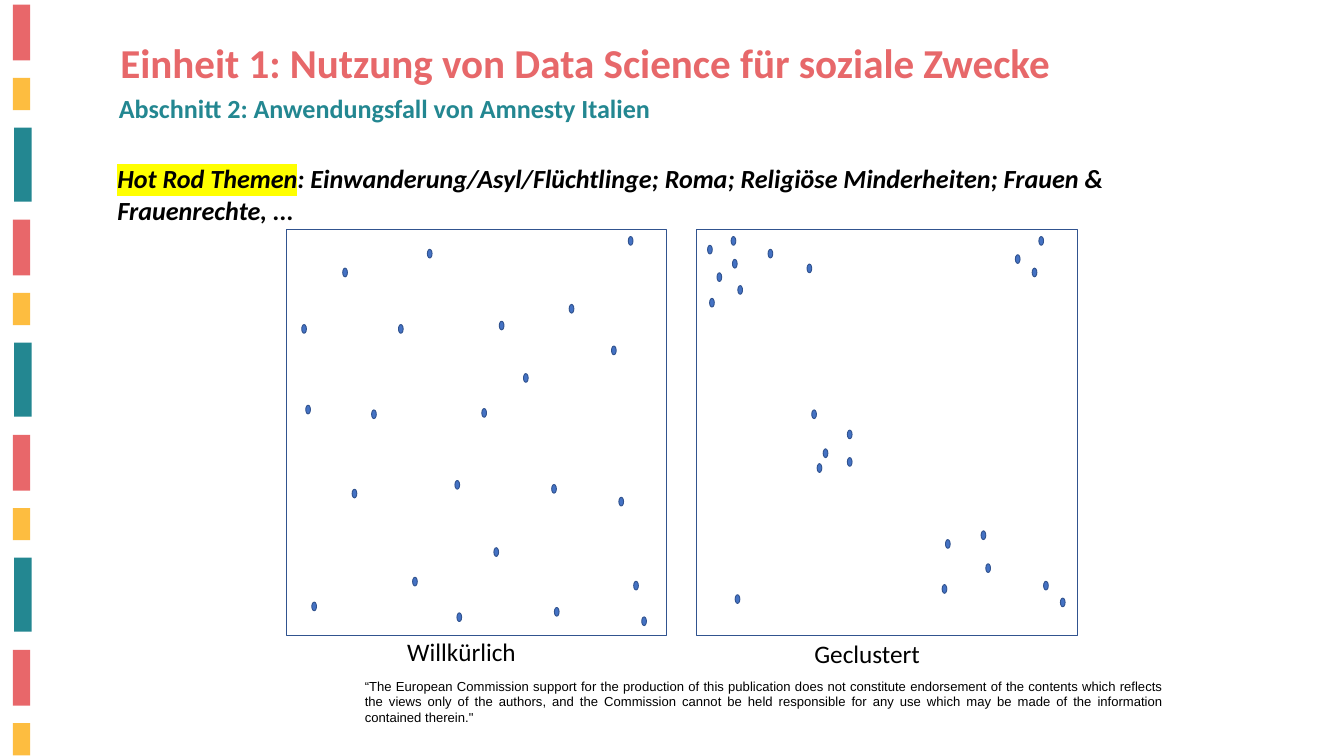
from lxml import etree
from pptx import Presentation
from pptx import util as u
from pptx.dml.color import RGBColor
from pptx.enum import shapes, text
from pptx.oxml.ns import qn

deck = Presentation()
deck.slide_width, deck.slide_height = u.Inches(20), u.Inches(11.25)
col, row = deck.slide_width / 20, deck.slide_height / 11.25
slide = deck.slides.add_slide(deck.slide_layouts[5])
kinds = shapes.MSO_SHAPE


def draw(kind, x, y, w, h, fill=None, line=None):
    shape = slide.shapes.add_shape(
        kind, int(x * col), int(y * row), int(w * col), int(h * row))
    shape.shadow.inherit = False
    if fill:
        shape.fill.solid()
        shape.fill.fore_color.rgb = RGBColor.from_string(fill)
    else:
        shape.fill.background()
    if line:
        shape.line.color.rgb = RGBColor.from_string(line)
        shape.line.width = u.Pt(1)
    else:
        shape.line.fill.background()


def write(box, at, parts, size, color="000000", face="Calibri",
          bold=False, slant=False, align=text.PP_ALIGN.LEFT):
    x, y, w, h = at
    box.left, box.top = int(x * col), int(y * row)
    box.width, box.height = int(w * col), int(h * row)
    frame = box.text_frame
    frame.word_wrap = True
    frame.auto_size = text.MSO_AUTO_SIZE.NONE
    frame.vertical_anchor = text.MSO_ANCHOR.TOP
    para = frame.paragraphs[0]
    para.alignment = align
    for part in parts:
        run = para.add_run()
        run.text = part
        font = run.font
        font.size, font.name = u.Pt(size), face
        font.bold, font.italic = bold, slant
        font.color.rgb = RGBColor.from_string(color)
    return para


def_box = (0, 0, 0, 0)
bands = [(0.19, 0.07, 0.83, "E8676A"), (0.19, 1.16, 0.48, "FDBD40"),
         (0.21, 1.9, 1.1, "238791")]
for turn in range(4):
    for x, y, h, fill in bands:
        top = y + turn * 3.2
        if top < 11.25:
            draw(kinds.RECTANGLE, x, top, 0.26, min(h, 11.25 - top), fill)

random = [
    (4.49, 4.83), (6.36, 3.71), (5.1, 3.99), (5.24, 7.28), (5.53, 6.1),
    (8.47, 4.53), (5.93, 4.83), (6.14, 8.59), (4.55, 6.03), (8.25, 9.04),
    (7.17, 6.08), (7.79, 5.56), (6.77, 7.15), (7.43, 4.78), (6.8, 9.12),
    (8.21, 7.21), (9.1, 5.15), (7.35, 8.15), (9.35, 3.52), (4.64, 8.96),
    (9.43, 8.65), (9.55, 9.18), (9.21, 7.4)]
groups = [
    (10.53, 3.65), (10.88, 3.52), (10.67, 4.06), (10.9, 3.86), (11.43, 3.71),
    (10.98, 4.25), (12.01, 3.93), (10.56, 4.44), (12.16, 6.9), (12.25, 6.68),
    (12.61, 6.81), (12.61, 6.4), (12.08, 6.1), (15.11, 3.79), (15.36, 3.99),
    (14.02, 8.7), (14.07, 8.03), (14.67, 8.39), (15.46, 3.52), (14.6, 7.9),
    (15.53, 8.65), (15.78, 8.9), (10.94, 8.85)]
for x, y in random + groups:
    draw(kinds.OVAL, x, y, 0.07, 0.13, "4472C4", "31538F")
for x in (4.26, 10.37):
    draw(kinds.RECTANGLE, x, 3.42, 5.66, 6.03, line="31538F")

write(slide.shapes.title, (1.69, 0.5, 16.55, 0.84),
      ["Einheit 1: Nutzung von Data Science für soziale Zwecke"],
      44, "E7686A", bold=True)

add = slide.shapes.add_textbox
write(add(*def_box), (1.67, 1.33, 10.98, 0.57),
      ["Abschnitt 2: Anwendungsfall von Amnesty Italien"],
      28, "238791", bold=True)
topics = write(
    add(*def_box), (1.65, 2.37, 17.08, 1.04),
    ["Hot Rod Themen", ": Einwanderung/Asyl/Flüchtlinge; Roma; Religiöse "
     "Minderheiten; Frauen & Frauenrechte, ..."],
    28, bold=True, slant=True)
mark = etree.Element(qn("a:highlight"))
etree.SubElement(mark, qn("a:srgbClr")).set("val", "FFFF00")
topics.runs[0].font._element.find(qn("a:latin")).addprevious(mark)

for x, y, label in [(5.96, 9.42, "Willkürlich"), (12.02, 9.45, "Geclustert")]:
    write(add(*def_box), (x, y, 3.17, 0.56), [label], 27)
write(add(*def_box), (5.33, 10.04, 12.08, 0.81),
      ["“The European Commission support for the production of this "
       "publication does not constitute endorsement of the contents which "
       "reflects the views only of the authors, and the Commission cannot be "
       "held responsible for any use which may be made of the information "
       "contained therein.\""],
      14, face="Arial", align=text.PP_ALIGN.JUSTIFY)

deck.save("out.pptx")
